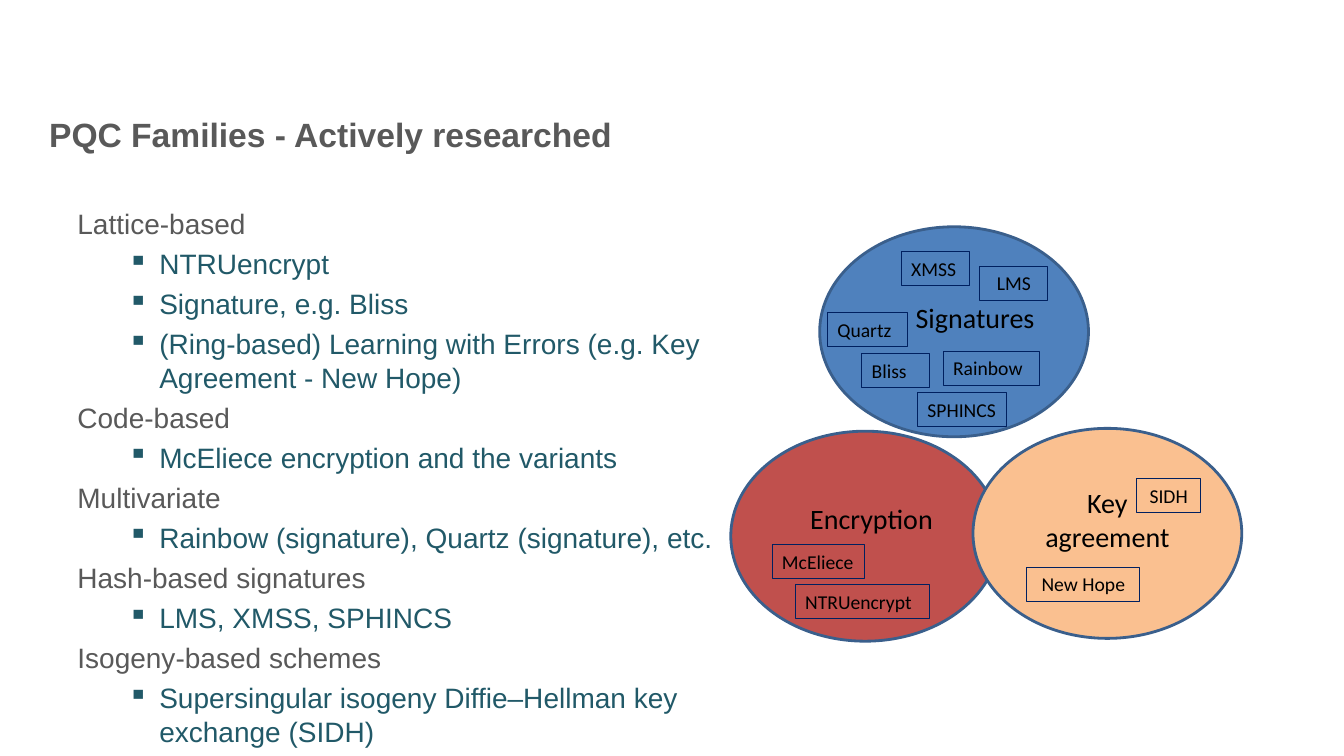
import pptx
import pptx.util
import pptx.dml.color
import pptx.enum.shapes
import pptx.enum.text
import lxml.etree

Pt = pptx.util.Pt
RGB = pptx.dml.color.RGBColor
SHAPE = pptx.enum.shapes.MSO_SHAPE
ALIGN = pptx.enum.text.PP_ALIGN
ANCHOR = pptx.enum.text.MSO_ANCHOR

GRAY = RGB(0x59, 0x59, 0x59)
TEAL = RGB(0x21, 0x59, 0x68)
BLACK = RGB(0, 0, 0)
NAVY = RGB(0x00, 0x20, 0x60)
OUTLINE = RGB(0x3A, 0x5F, 0x8C)
BLUE = RGB(0x4F, 0x81, 0xBD)
RED = RGB(0xC0, 0x50, 0x4D)
PEACH = RGB(0xFA, 0xC0, 0x90)

TITLE = {"name": "Arial", "size": Pt(24), "bold": True}
BODY = {"name": "Arial", "size": Pt(20)}
GROUP = {"name": "Calibri", "size": Pt(20)}
LABEL = {"name": "Calibri", "size": Pt(14)}


def write(p, text, font, color):
    r = p.add_run()
    r.text = text
    for key, value in font.items():
        setattr(r.font, key, value)
    r.font.color.rgb = color


def add_shape(kind, x, y, w, h, line, width):
    sp = s.shapes.add_shape(kind, Pt(x), Pt(y), Pt(w), Pt(h))
    sp.shadow.inherit = False
    sp.fill.background()
    sp.line.color.rgb = line
    sp.line.width = Pt(width)
    return sp


prs = pptx.Presentation()
prs.slide_width, prs.slide_height = Pt(960), Pt(540)
s = prs.slides.add_slide(prs.slide_layouts[6])

tf = s.shapes.add_textbox(Pt(28), Pt(54), Pt(888), Pt(60)).text_frame
tf.word_wrap = True
tf.vertical_anchor = ANCHOR.BOTTOM
p = tf.paragraphs[0]
p.line_spacing = Pt(26)
write(p, "PQC Families - Actively researched", TITLE, GRAY)

families = {
    "Lattice-based": [
        "NTRUencrypt",
        "Signature, e.g. Bliss",
        "(Ring-based) Learning with Errors (e.g. Key Agreement - New Hope)",
    ],
    "Code-based": ["McEliece encryption and the variants"],
    "Multivariate": ["Rainbow (signature), Quartz (signature), etc."],
    "Hash-based signatures": ["LMS, XMSS, SPHINCS"],
    "Isogeny-based schemes": ["Supersingular isogeny Diffie–Hellman key exchange (SIDH)"],
}
tf = s.shapes.add_textbox(Pt(48.2), Pt(144), Pt(497), Pt(378)).text_frame
tf.word_wrap = True
p = tf.paragraphs[0]
for family, schemes in families.items():
    if p is None:
        p = tf.add_paragraph()
        p.space_before = Pt(4.6)
    write(p, family, BODY, GRAY)
    for scheme in schemes:
        p = tf.add_paragraph()
        p.level = 1
        p.space_before = Pt(4.6)
        pPr = p._p.get_or_add_pPr()
        pPr.set("marL", str(Pt(58.5)))
        pPr.set("indent", str(Pt(-22.5)))
        bullet = lxml.etree.SubElement(pPr, pptx.oxml.ns.qn("a:buChar"))
        bullet.set("char", "▪")
        write(p, scheme, BODY, TEAL)
    p = None

groups = [
    ("Signatures", BLUE, 585.5, 162, 636.5, 211),
    ("Encryption", RED, 522, 308, 562.5, 355),
    ("Key agreement", PEACH, 695, 306, 731, 343.5),
]
for name, fill, x, y, text_x, text_y in groups:
    sp = add_shape(SHAPE.OVAL, x, y, 192, 150, OUTLINE, 2)
    sp.fill.solid()
    sp.fill.fore_color.rgb = fill
    tf = s.shapes.add_textbox(Pt(text_x), Pt(text_y), Pt(120), Pt(31.6)).text_frame
    tf.word_wrap = True
    tf.auto_size = pptx.enum.text.MSO_AUTO_SIZE.SHAPE_TO_FIT_TEXT
    p = tf.paragraphs[0]
    p.alignment = ALIGN.CENTER
    write(p, name, GROUP, BLACK)

labels = [
    ("NTRUencrypt", 568, 417.5, 96, ALIGN.LEFT),
    ("New Hope", 733.5, 405.3, 80.8, ALIGN.CENTER),
    ("Bliss", 615.5, 252.5, 48.5, ALIGN.LEFT),
    ("XMSS", 643.7, 179.7, 48.5, ALIGN.LEFT),
    ("Rainbow", 673.7, 251, 69, ALIGN.LEFT),
    ("McEliece", 551.5, 389, 66, ALIGN.LEFT),
    ("SIDH", 812, 342, 45.5, ALIGN.CENTER),
    ("LMS", 700, 190.3, 48.5, ALIGN.CENTER),
    ("SPHINCS", 655.4, 280.5, 63.5, ALIGN.LEFT),
    ("Quartz", 591, 223.2, 57, ALIGN.LEFT),
]
for name, x, y, w, align in labels:
    sp = add_shape(SHAPE.RECTANGLE, x, y, w, 24.3, NAVY, 0.75)
    tf = sp.text_frame
    tf.word_wrap = True
    tf.vertical_anchor = ANCHOR.TOP
    if align == ALIGN.LEFT:
        tf.margin_right = 0
    p = tf.paragraphs[0]
    p.alignment = align
    write(p, name, LABEL, BLACK)

prs.save("out.pptx")
